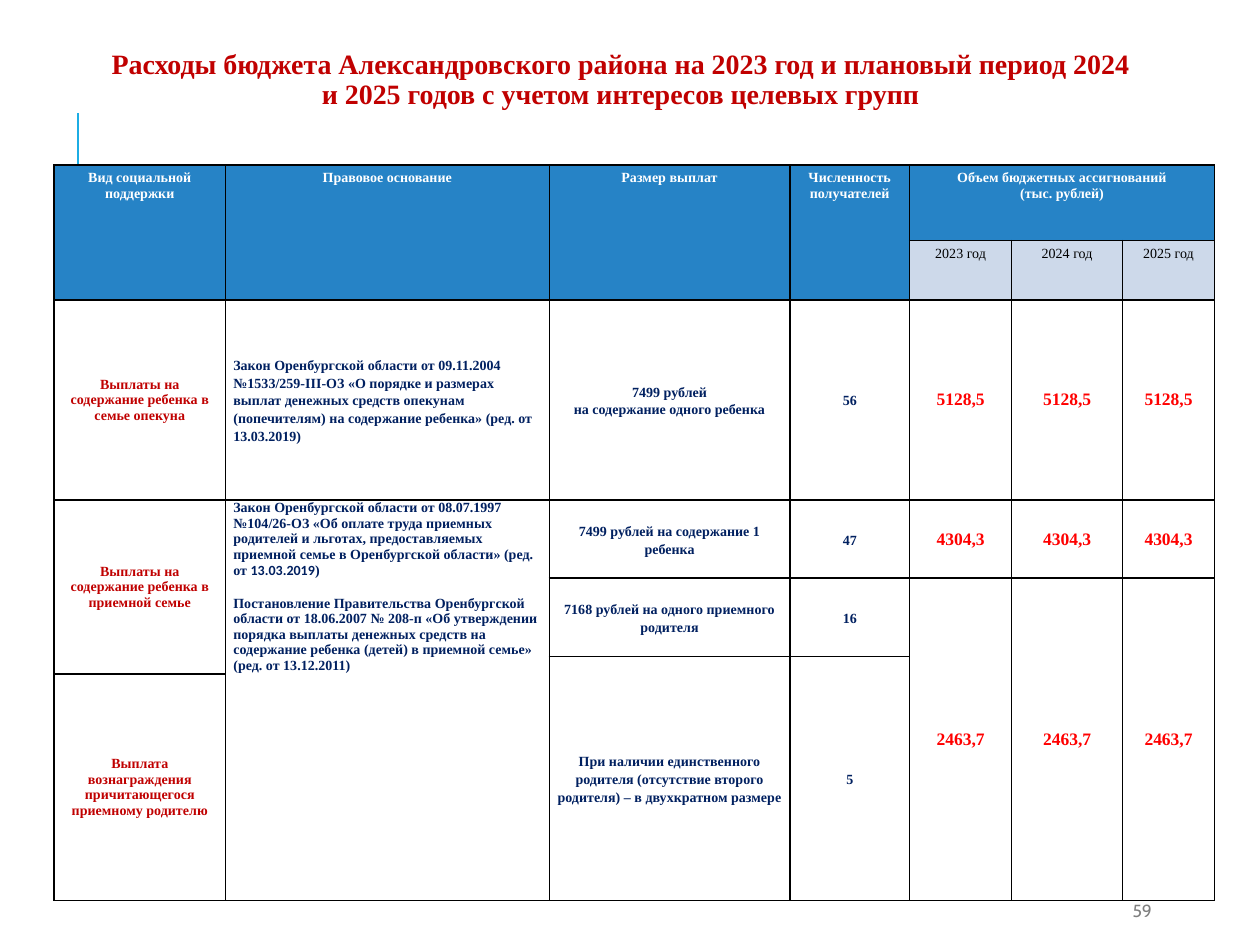
from lxml import etree
from pptx import Presentation
from pptx.dml.color import RGBColor
from pptx.enum import shapes, text
from pptx.oxml.ns import qn
from pptx.util import Pt

TITLE = ("Расходы бюджета Александровского района на 2023 год и плановый период 2024 "
         "и 2025 годов с учетом интересов целевых групп")
PAGE = "59"
YEARS = ["2023 год", "2024 год", "2025 год"]
HEADS = ["Вид социальной поддержки", "Правовое основание", "Размер выплат",
         "Численность получателей"]
GROUP = "Объем бюджетных ассигнований\n(тыс. рублей)"
NAMES = [
    (2, 1, "Выплаты на содержание ребенка в семье опекуна"),
    (3, 3, "Выплаты на содержание ребенка в приемной семье"),
    (6, 1, "Выплата вознаграждения причитающегося приемному родителю"),
]
LAW = ("Закон Оренбургской области от 09.11.2004 №1533/259-III-ОЗ «О порядке и размерах "
       "выплат денежных средств опекунам (попечителям) на содержание ребенка» "
       "(ред. от 13.03.2019)")
ACTS = [
    [("Закон Оренбургской области от 08.07.1997 №104/26-ОЗ «Об оплате труда приемных "
      "родителей и льготах, предоставляемых приемной семье в Оренбургской области» "
      "(ред. от ", "serif"), ("13.03.2019", "sans"), (")", "serif")],
    [("Постановление Правительства Оренбургской области от 18.06.2007 № 208-п "
      "«Об утверждении порядка выплаты денежных средств на содержание ребенка (детей) "
      "в приемной семье» (ред. от 13.12.2011)", "serif")],
]
RATES = [
    (2, 1, "7499 рублей\nна содержание одного ребенка", "56"),
    (3, 1, "7499 рублей на содержание 1 ребенка", "47"),
    (4, 1, "7168 рублей на одного приемного родителя", "16"),
    (5, 2, "При наличии единственного родителя (отсутствие второго родителя) – "
           "в двухкратном размере", "5"),
]
SUMS = [(2, 1, "5128,5"), (3, 1, "4304,3"), (4, 3, "2463,7")]

COLS = [97.92, 185.04, 137.52, 68.4, 58.32, 63.36, 52.56]
ROWS = [43.2, 33.84, 114.48, 44.64, 44.64, 10.08, 129.6]

THEME = {
    "serif": "Times New Roman", "sans": "Calibri", "page": "Cabin",
    "red": "C00000", "sum": "FF0000", "navy": "002060", "white": "FFFFFF",
    "black": "000000", "gray": "808080", "blue": "2683C6", "pale": "CDD9EA",
    "rule": "1CADE4", "title": 16, "small": 8, "mid": 10,
}
MID, TOP = text.MSO_ANCHOR.MIDDLE, text.MSO_ANCHOR.TOP
LEFT, CENTER = text.PP_ALIGN.LEFT, text.PP_ALIGN.CENTER
WIDE, SLIM, THIN = (5, 3), (4.5, 0), (0.75, 0.5)


def look(color, size="small", bold=True, fill=None, anchor=MID, align=CENTER,
         pad=WIDE, lead=1.0, gap=0):
    return dict(color=color, size=size, bold=bold, fill=fill, anchor=anchor,
                align=align, pad=pad, lead=lead, gap=gap)


LOOKS = {
    "head": look("white", fill="blue", anchor=TOP),
    "year": look("black", bold=False, fill="pale", anchor=TOP),
    "name": look("red"),
    "law": look("navy", align=LEFT, pad=SLIM, lead=1.15),
    "acts": look("navy", align=LEFT, pad=SLIM, anchor=TOP, gap=9.2),
    "rate": look("navy", pad=SLIM, lead=1.15),
    "sum": look("sum", size="mid", pad=THIN),
}


def rgb(key):
    return RGBColor.from_string(THEME[key])


def put(obj, vals):
    for key, val in vals.items():
        setattr(obj, key, val)


def write(par, runs, color, size, bold):
    for words, face in runs:
        run = par.add_run()
        run.text = words
        put(run.font, {"name": THEME[face], "size": Pt(THEME[size]), "bold": bold})
        run.font.color.rgb = rgb(color)


def box(slide, left, top, wide, high, pad):
    frame = slide.shapes.add_textbox(Pt(left), Pt(top), Pt(wide), Pt(high)).text_frame
    put(frame, {"word_wrap": True, "margin_left": Pt(pad[0]), "margin_right": Pt(pad[0]),
                "margin_top": Pt(pad[1]), "margin_bottom": Pt(pad[1])})
    return frame


def edge(cell):
    props = cell._tc.get_or_add_tcPr()
    for side in ("a:lnL", "a:lnR", "a:lnT", "a:lnB"):
        line = etree.SubElement(props, qn(side), w=str(Pt(1)))
        fill = etree.SubElement(line, qn("a:solidFill"))
        etree.SubElement(fill, qn("a:srgbClr"), val=THEME["black"])


def fill_cell(table, row, col, down, over, kind, body):
    cell, fmt = table.cell(row, col), LOOKS[kind]
    if down * over > 1:
        cell.merge(table.cell(row + down - 1, col + over - 1))
    side, rise = fmt["pad"]
    put(cell, {"vertical_anchor": fmt["anchor"], "margin_left": Pt(side),
               "margin_right": Pt(side), "margin_top": Pt(rise), "margin_bottom": Pt(rise)})
    if fmt["fill"]:
        cell.fill.solid()
        cell.fill.fore_color.rgb = rgb(fmt["fill"])
    if isinstance(body, str):
        body = [[(part, "serif")] for part in body.split("\n")]
    frame = cell.text_frame
    for i, runs in enumerate(body):
        par = frame.add_paragraph() if i else frame.paragraphs[0]
        put(par, {"alignment": fmt["align"], "line_spacing": fmt["lead"],
                  "space_before": Pt(fmt["gap"] if i else 0)})
        write(par, runs, fmt["color"], fmt["size"], fmt["bold"])


def cells():
    for col, head in enumerate(HEADS):
        yield 0, col, 2, 1, "head", head
    yield 0, 4, 1, 3, "head", GROUP
    for col, year in enumerate(YEARS, 4):
        yield 1, col, 1, 1, "year", year
    for row, down, name in NAMES:
        yield row, 0, down, 1, "name", name
    yield 2, 1, 1, 1, "law", LAW
    yield 3, 1, 4, 1, "acts", ACTS
    for row, down, rate, count in RATES:
        yield row, 2, down, 1, "rate", rate
        yield row, 3, down, 1, "rate", count
    for row, down, total in SUMS:
        for col in range(4, 7):
            yield row, col, down, 1, "sum", total


def main():
    deck = Presentation()
    put(deck, {"slide_width": Pt(720), "slide_height": Pt(540)})
    slide = deck.slides.add_slide(deck.slide_layouts[6])

    rule = slide.shapes.add_connector(shapes.MSO_CONNECTOR.STRAIGHT,
                                      Pt(44.64), Pt(136.8), Pt(44.64), Pt(64.8))
    rule.line.width = Pt(1.5)
    rule.line.color.rgb = rgb("rule")
    etree.SubElement(rule._element.spPr, qn("a:effectLst"))

    par = box(slide, 48.24, 25.2, 605.52, 75.6, (3.6, 3.6)).paragraphs[0]
    put(par, {"alignment": CENTER, "line_spacing": 0.9, "space_before": Pt(12),
              "space_after": Pt(2)})
    par._p.get_or_add_pPr().set("marL", str(Pt(7.2)))
    write(par, [(TITLE, "serif")], "red", "title", True)

    frame = box(slide, 640.08, 509.76, 57.6, 21.6, (7.2, 3.6))
    frame.vertical_anchor = MID
    write(frame.paragraphs[0], [(PAGE, "page")], "gray", "mid", False)

    table = slide.shapes.add_table(len(ROWS), len(COLS), Pt(30.96), Pt(94.32),
                                   Pt(sum(COLS)), Pt(sum(ROWS))).table
    put(table, {"first_row": False, "horz_banding": False})
    for col, wide in zip(table.columns, COLS):
        col.width = Pt(wide)
    for row, high in zip(table.rows, ROWS):
        row.height = Pt(high)
    for cell in table.iter_cells():
        edge(cell)
        cell.fill.background()
    for item in cells():
        fill_cell(table, *item)
    deck.save("out.pptx")


if __name__ == "__main__":
    main()
